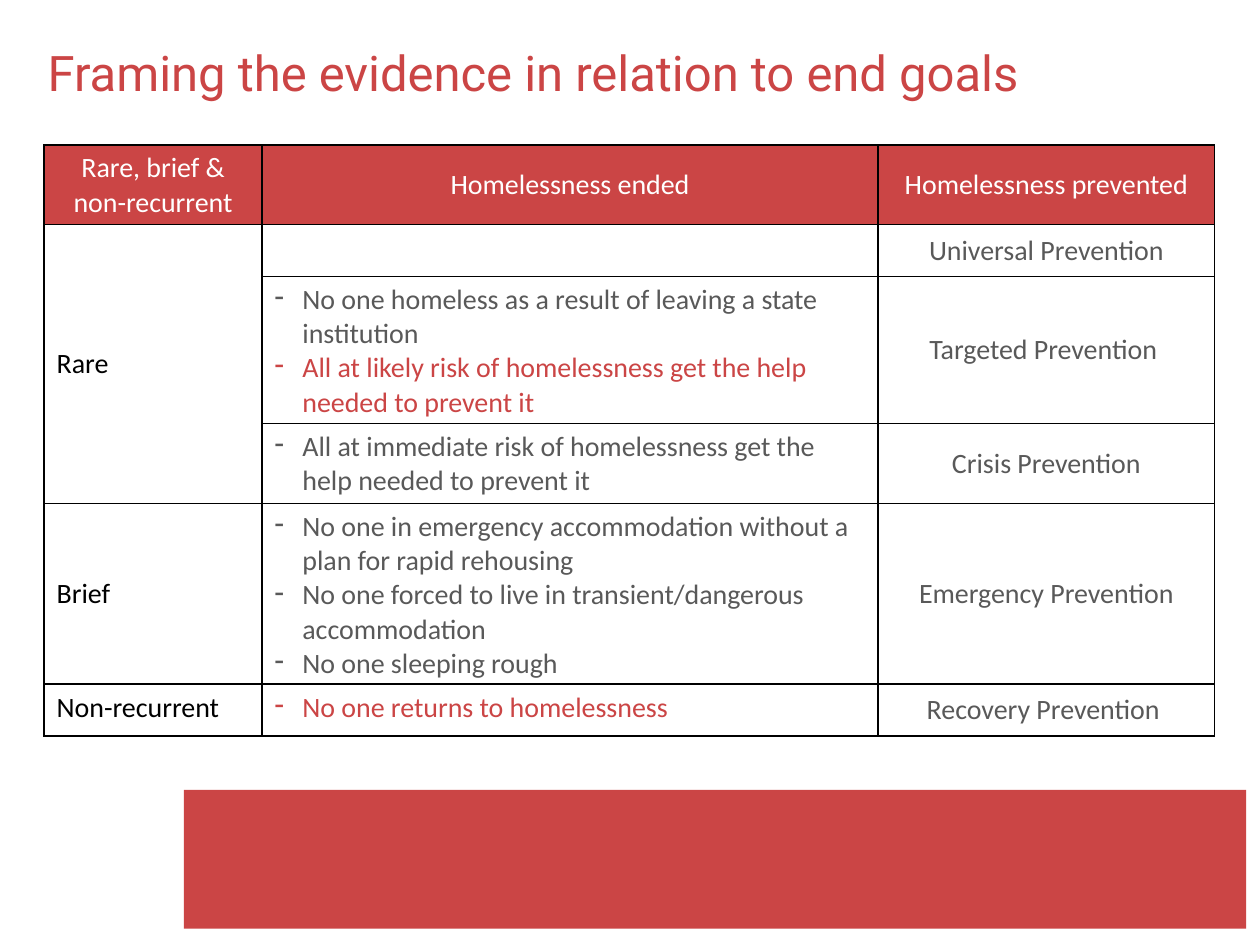
from dataclasses import dataclass

from lxml.etree import SubElement
from pptx import Presentation
from pptx.dml.color import RGBColor
from pptx.enum.shapes import MSO_SHAPE
from pptx.enum.text import MSO_ANCHOR, MSO_AUTO_SIZE, PP_ALIGN
from pptx.oxml.ns import qn
from pptx.slide import Slide
from pptx.table import _Cell
from pptx.util import Inches, Pt

RED, GREY, BLACK, WHITE = "CB4545", "595959", "000000", "FFFFFF"
COL_WIDTHS = [1.73, 4.89, 2.67]
ROW_HEIGHTS = [0.63, 0.41, 1.17, 0.63, 1.43, 0.41]
HEADERS = ["Rare, brief & non-recurrent", "Homelessness ended", "Homelessness prevented"]


@dataclass
class Line:
    text: str
    color: str = GREY
    align: PP_ALIGN | None = None
    bullet: bool = False


@dataclass
class Stage:
    name: str
    goals: list[Line]
    prevention: str
    name_anchor: MSO_ANCHOR = MSO_ANCHOR.MIDDLE


def goal(text: str, color: str = GREY) -> Line:
    return Line(text, color, bullet=True)


STAGES = [
    Stage("Rare", [], "Universal Prevention"),
    Stage("", [goal("No one homeless as a result of leaving a state institution"),
               goal("All at likely risk of homelessness get the help needed to prevent it", RED)],
          "Targeted Prevention "),
    Stage("", [goal("All at immediate risk of homelessness get the help needed to prevent it")],
          "Crisis Prevention"),
    Stage("Brief", [goal("No one in emergency accommodation without a plan for rapid rehousing"),
                    goal("No one forced to live in transient/dangerous accommodation"),
                    goal("No one sleeping rough")],
          "Emergency Prevention"),
    Stage("Non-recurrent", [goal("No one returns to homelessness", RED)],
          "Recovery Prevention ", MSO_ANCHOR.TOP),
]


def rgb(value: str) -> RGBColor:
    return RGBColor.from_string(value)


def add_run(p, text: str, font: str, size: int, color: str) -> None:
    r = p.add_run()
    r.text = text
    r.font.name = font
    r.font.size = Pt(size)
    r.font.bold = False
    r.font.color.rgb = rgb(color)


def set_dash_bullet(p) -> None:
    pPr = p._p.get_or_add_pPr()
    indent = Inches(0.22)
    pPr.set("marL", str(indent))
    pPr.set("indent", str(-indent))
    SubElement(pPr, qn("a:buFontTx"))
    SubElement(pPr, qn("a:buChar"), char="-")


def set_borders(cell: _Cell) -> None:
    tcPr = cell._tc.get_or_add_tcPr()
    for side in ("L", "R", "T", "B"):
        ln = SubElement(tcPr, qn(f"a:ln{side}"), w=str(Pt(1)))
        fill = SubElement(ln, qn("a:solidFill"))
        SubElement(fill, qn("a:srgbClr"), val=BLACK)


def fill_cell(cell: _Cell, lines: list[Line], anchor: MSO_ANCHOR = MSO_ANCHOR.MIDDLE,
              fill: str | None = None) -> None:
    set_borders(cell)
    if fill:
        cell.fill.solid()
        cell.fill.fore_color.rgb = rgb(fill)
    else:
        cell.fill.background()
    cell.vertical_anchor = anchor
    tf = cell.text_frame
    for i, line in enumerate(lines):
        p = tf.add_paragraph() if i else tf.paragraphs[0]
        p.alignment = line.align
        if line.bullet:
            set_dash_bullet(p)
        add_run(p, line.text, "Calibri", 16, line.color)


def add_footer_block(s: Slide) -> None:
    sp = s.shapes.add_shape(MSO_SHAPE.RECTANGLE, Inches(1.46), Inches(6.27),
                            Inches(8.43), Inches(1.1))
    sp.shadow.inherit = False
    sp.fill.solid()
    sp.fill.fore_color.rgb = rgb(RED)
    sp.line.fill.background()


def add_title(s: Slide, text: str) -> None:
    sp = s.shapes.add_textbox(Inches(0.28), Inches(0.29), Inches(9.45), Inches(0.57))
    tf = sp.text_frame
    tf.word_wrap = True
    tf.auto_size = MSO_AUTO_SIZE.SHAPE_TO_FIT_TEXT
    add_run(tf.paragraphs[0], text, "Roboto", 28, RED)


def add_goals_table(s: Slide) -> None:
    frame = s.shapes.add_table(len(ROW_HEIGHTS), len(COL_WIDTHS), Inches(0.35), Inches(1.15),
                               Inches(sum(COL_WIDTHS)), Inches(sum(ROW_HEIGHTS)))
    table = frame.table
    for column, width in zip(table.columns, COL_WIDTHS):
        column.width = Inches(width)
    for row, height in zip(table.rows, ROW_HEIGHTS):
        row.height = Inches(height)

    for col, text in enumerate(HEADERS):
        fill_cell(table.cell(0, col), [Line(text, WHITE, PP_ALIGN.CENTER)], fill=RED)
    for row, stage in enumerate(STAGES, start=1):
        name = [Line(stage.name, BLACK)] if stage.name else []
        fill_cell(table.cell(row, 0), name, stage.name_anchor)
        fill_cell(table.cell(row, 1), stage.goals, MSO_ANCHOR.TOP)
        fill_cell(table.cell(row, 2), [Line(stage.prevention, align=PP_ALIGN.CENTER)])
    table.cell(1, 0).merge(table.cell(3, 0))


def main() -> None:
    prs = Presentation()
    prs.slide_width, prs.slide_height = Inches(10), Inches(7.5)
    s = prs.slides.add_slide(prs.slide_layouts[6])
    add_footer_block(s)
    add_title(s, "Framing the evidence in relation to end goals")
    add_goals_table(s)
    prs.save("out.pptx")


if __name__ == "__main__":
    main()
